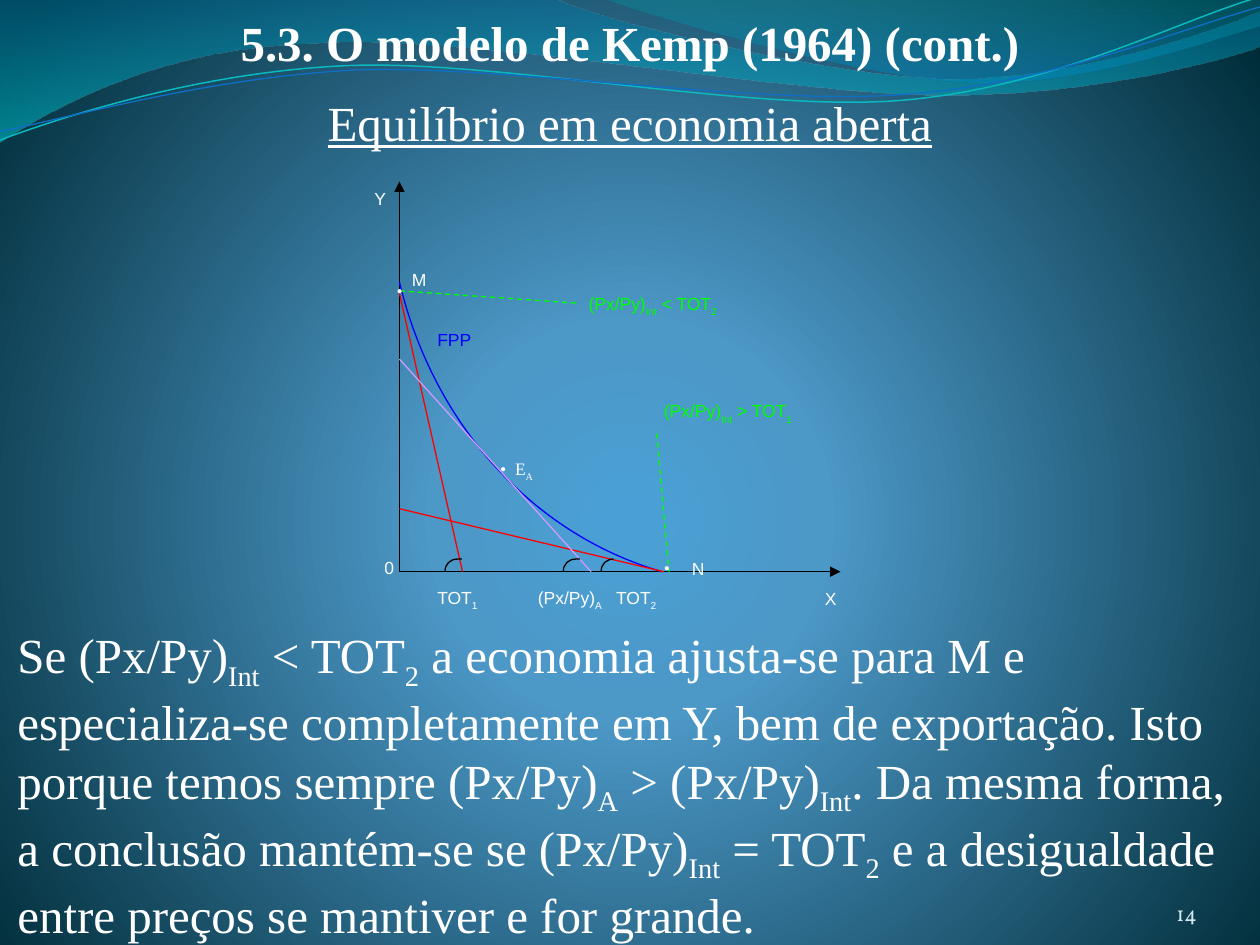
from math import cos, radians, sin

from lxml import etree
from pptx import Presentation
from pptx.dml.color import RGBColor
from pptx.enum.dml import MSO_LINE
from pptx.enum.shapes import MSO_CONNECTOR
from pptx.enum.text import MSO_ANCHOR, PP_ALIGN
from pptx.oxml.ns import qn
from pptx.util import Pt

STRAIGHT = MSO_CONNECTOR.STRAIGHT
DASH = MSO_LINE.DASH
TOP, MIDDLE, BOTTOM = MSO_ANCHOR.TOP, MSO_ANCHOR.MIDDLE, MSO_ANCHOR.BOTTOM
LEFT, CENTER, RIGHT = PP_ALIGN.LEFT, PP_ALIGN.CENTER, PP_ALIGN.RIGHT

WHITE = RGBColor(0xFF, 0xFF, 0xFF)
BLACK = RGBColor(0x00, 0x00, 0x00)
BLUE = RGBColor(0x00, 0x00, 0xFF)
RED = RGBColor(0xFF, 0x00, 0x00)
LILAC = RGBColor(0xCC, 0x99, 0xFF)
GREEN = RGBColor(0x00, 0xFF, 0x00)
PALE = RGBColor(0xD1, 0xEA, 0xEE)
TEAL = RGBColor(0x0A, 0xB8, 0xBF)
AZURE = RGBColor(0x0F, 0x6F, 0xC6)
SKY = RGBColor(0x4A, 0xA0, 0xD6)
STEEL = RGBColor(0x4C, 0x98, 0xC7)
NIGHT = RGBColor(0x00, 0x2C, 0x38)
OCEAN = RGBColor(0x00, 0x74, 0xA1)
TURQUOISE = RGBColor(0x00, 0xC6, 0xCF)
LAGOON = RGBColor(0x00, 0xA1, 0xA9)
CERULEAN = RGBColor(0x00, 0x8B, 0xBF)

SERIF, SANS, NUMBER_FONT = "Times New Roman", "Arial", "Vollkorn"
STRAND_ANGLE = -2.7


def fill_gradient(fill, element, stops, center=None):
    fill.gradient()
    gradient = element.find(".//" + qn("a:gradFill"))
    for child in list(gradient):
        gradient.remove(child)
    stop_list = etree.SubElement(gradient, qn("a:gsLst"))
    for position, color, opacity in stops:
        stop = etree.SubElement(stop_list, qn("a:gs"), pos=str(position * 1000))
        value = etree.SubElement(stop, qn("a:srgbClr"), val=str(color))
        if opacity < 100:
            etree.SubElement(value, qn("a:alpha"), val=str(opacity * 1000))
    if center:
        shade = etree.SubElement(gradient, qn("a:path"))
        shade.set("path", "circle")
        sides = {side: str(share * 1000) for side, share in zip("ltrb", center)}
        etree.SubElement(shade, qn("a:fillToRect"), **sides)
    else:
        etree.SubElement(gradient, qn("a:lin"), ang="5400000", scaled="1")


def curves(points):
    return [points[first:first + 3] for first in range(0, len(points), 3)]


def add_outline(page, box, start, steps, close=False, color=None, width=0.75):
    left, top, box_width, box_height = box
    right, bottom = left + box_width, top + box_height
    builder = page.shapes.build_freeform(Pt(left), Pt(top))
    builder.add_line_segments(
        [(Pt(x), Pt(y)) for x, y in [(right, top), (right, bottom), (left, bottom)]])
    shape = builder.convert_to_shape()
    outline = shape._element.find(".//" + qn("a:path"))
    for child in list(outline):
        outline.remove(child)
    for step in [[start], *steps]:
        if step[0] is start:
            tag = "a:moveTo"
        else:
            tag = "a:cubicBezTo" if len(step) == 3 else "a:lnTo"
        command = etree.SubElement(outline, qn(tag))
        for x, y in step:
            etree.SubElement(command, qn("a:pt"), x=str(int(Pt(x - left))),
                             y=str(int(Pt(y - top))))
    if close:
        etree.SubElement(outline, qn("a:close"))
    shape.shadow.inherit = False
    shape.fill.background()
    if color is None:
        shape.line.fill.background()
    else:
        shape.line.color.rgb = color
        shape.line.width = Pt(width)
    return shape


def add_line(page, start, end, color, dash=None, arrow=False):
    line = page.shapes.add_connector(STRAIGHT, *(Pt(v) for v in (*start, *end)))
    line.line.color.rgb = color
    line.line.width = Pt(0.75)
    if dash is not None:
        line.line.dash_style = dash
    if arrow:
        etree.SubElement(line.line._get_or_add_ln(), qn("a:tailEnd"), type="triangle")
    etree.SubElement(line._element.spPr, qn("a:effectLst"))


def add_text(page, box, pieces, size, font, color=WHITE, align=LEFT, anchor=TOP,
             inset=True, bold=False, underline=False, drop=30, tab=None):
    frame = page.shapes.add_textbox(*(Pt(v) for v in box)).text_frame
    frame.word_wrap = True
    frame.vertical_anchor = anchor
    if not inset:
        frame.margin_left = frame.margin_right = 0
        frame.margin_top = frame.margin_bottom = 0
    para = frame.paragraphs[0]
    para.alignment = align
    if tab:
        stops = etree.SubElement(para._p.get_or_add_pPr(), qn("a:tabLst"))
        etree.SubElement(stops, qn("a:tab"), pos=str(int(Pt(tab))), algn="l")
    for index, piece in enumerate(pieces):
        span = para.add_run()
        span.text = piece
        span.font.size = Pt(size)
        span.font.name = font
        span.font.color.rgb = color
        span.font.bold = bold
        span.font.underline = underline
        if index % 2:
            span._r.get_or_add_rPr().set("baseline", str(-drop * 1000))


def add_strand(page, box, points, color, weight):
    left, top, width, height = box
    middle_x, middle_y = left + width / 2, top + height / 2
    cosine, sine = cos(radians(STRAND_ANGLE)), sin(radians(STRAND_ANGLE))
    level = [(middle_x + (x - middle_x) * cosine + (y - middle_y) * sine,
              middle_y - (x - middle_x) * sine + (y - middle_y) * cosine)
             for x, y in points]
    strand = add_outline(page, box, level[0], curves(level[1:]), color=color, width=weight)
    strand.rotation = STRAND_ANGLE


def add_backdrop(page, box):
    left, top, width, height = box
    fill_gradient(page.background.fill, page._element,
                  [(0, SKY, 100), (25, STEEL, 100), (100, NIGHT, 100)],
                  (10, 110, 10, 100))
    upper = [(343, 12), (478, 45), (546, 45), (614, 45), (690, 19), (720, 6.5)]
    lower = [(708, 32), (626, 55), (537, 54), (448, 54), (275, 20),
             (185, 24.5), (93, 26), (33, 60), (-0.7, 81.3)]
    crest = [(367, 8), (491, 45), (554, 47), (616, 50), (692, 23), (720, 15)]
    band = add_outline(
        page, (left - 0.7, top - 0.7, width + 1.4, 82), (0, 0),
        [[(317, -0.7)], *curves(upper), [(720.7, 26)], *curves(lower)], close=True)
    fill_gradient(band.fill, band._element, [(0, OCEAN, 45), (100, TURQUOISE, 55)])
    ridge = add_outline(
        page, (left + 345, top - 0.7, width - 345, 50.4), (345, -0.7),
        [*curves(crest), [(720, 0)]], close=True)
    fill_gradient(ridge.fill, ridge._element, [(0, LAGOON, 30), (80, CERULEAN, 45)])
    add_strand(page, (left - 1.4, top + 15.8, 721.4, 51.1),
               [(0, 80), (35, 67), (114, 41), (199, 37.5), (284, 34), (427, 64),
                (513, 57.5), (600, 51), (675, 11), (719, -1.5)], TEAL, 0.85)
    add_strand(page, (left - 1.4, top + 21.6, 722.2, 41.8),
               [(0, 75), (34, 69), (118, 44), (204, 40), (290, 37), (430, 60.5),
                (516, 54), (602, 48), (678, 15), (720, 4)], AZURE, 0.75)


def add_diagram(page, box):
    left, top, width, height = box

    def place(x, y):
        return left + x, top + height - y

    for end in [(0, height), (width, 0)]:
        add_line(page, place(0, 0), place(*end), BLACK, arrow=True)
    frontier = [place(*point) for point in [(77, 21), (19.5, 83.5), (0, 165.5)]]
    add_outline(page, (*place(0, 226.8), 200, 226.8), place(150, 0), [frontier],
                color=BLUE)
    for start, end, color, dash in [
        ((0, 159), (36, 0), RED, None),
        ((151, 0), (0, 36), RED, None),
        ((0, 121.5), (109.5, 0), LILAC, None),
        ((147, 79), (154, 0), GREEN, DASH),
        ((101, 153.5), (0, 160.5), GREEN, DASH),
    ]:
        add_line(page, place(*start), place(*end), color, dash)
    for start, span in [(26, 9.7), (93.6, 9.7), (115.2, 7.2)]:
        bend = [place(start + x, y) for x, y in [(0, 4.3), (3, 7.2), (7.2, 7.2)]]
        tail = [[place(start + span, 7.2)]] if span > 7.2 else []
        add_outline(page, (*place(start, 7.2), span, 7.2), place(start, 0),
                    [bend, *tail], color=BLACK)
    for x, y, label_width, pieces, font, color in [
        (0, 176.5, 43, ["M"], SANS, WHITE),
        (160, 11.5, 43, ["N"], SANS, WHITE),
        (236, -6, 43, ["X"], SANS, WHITE),
        (-21.5, 223, 43, ["Y"], SANS, WHITE),
        (-15.7, 12, 28, ["0"], SANS, WHITE),
        (14.5, -5, 43, ["TOT", "1"], SANS, WHITE),
        (72, -5, 60, ["(Px/Py)", "A"], SANS, WHITE),
        (116.7, -5, 43, ["TOT", "2"], SANS, WHITE),
        (14.5, 142.5, 43, ["FPP"], SANS, BLUE),
        (50.4, 68.5, 43, ["•\tE", "A"], SERIF, WHITE),
        (144, 12, 43, ["•"], SERIF, WHITE),
        (-8.8, 170.5, 43, ["•"], SERIF, WHITE),
        (144, 101.5, 101, ["(Px/Py)", "Int", " > TOT", "1"], SANS, GREEN),
        (101, 162.7, 94, ["(Px/Py)", "Int", " < TOT", "2"], SANS, GREEN),
    ]:
        tab = 8.5 if "\t" in pieces[0] else None
        add_text(page, (*place(x, y), label_width, 29), pieces, 10, font, color, tab=tab)


def add_headings(page, box):
    left, top, width, height = box
    add_text(page, (left, top, width, 41), ["5.3. O modelo de Kemp (1964) (cont.)"],
             28, SERIF, align=CENTER, bold=True)
    add_text(page, (left, top + height - 41, width, 41), ["Equilíbrio em economia aberta"],
             28, SERIF, align=CENTER, anchor=MIDDLE, underline=True)


def add_conclusion(page, box):
    pieces = [
        "Se (Px/Py)", "Int", " < TOT", "2",
        " a economia ajusta-se para M e especializa-se completamente em Y, bem de "
        "exportação. Isto porque temos sempre (Px/Py)", "A", " > (Px/Py)", "Int",
        ". Da mesma forma, a conclusão mantém-se se (Px/Py)", "Int", " = TOT", "2",
        " e a desigualdade entre preços se mantiver e for grande.",
    ]
    add_text(page, box, pieces, 28, SERIF, anchor=MIDDLE, drop=25)


def add_page_number(page, box):
    add_text(page, box, ["14"], 12, NUMBER_FONT, PALE, RIGHT, BOTTOM, inset=False)


def main():
    deck = Presentation()
    deck.slide_width, deck.slide_height = Pt(720), Pt(540)
    page = deck.slides.add_slide(deck.slide_layouts[6])
    add_backdrop(page, (0, 0, 720, 540))
    add_headings(page, (0, 3.6, 720, 86.4))
    add_diagram(page, (228.3, 103.7, 252, 223))
    add_conclusion(page, (2.9, 359.5, 717.1, 177))
    add_page_number(page, (624, 500.4, 60, 28.8))
    deck.save("out.pptx")


if __name__ == "__main__":
    main()
